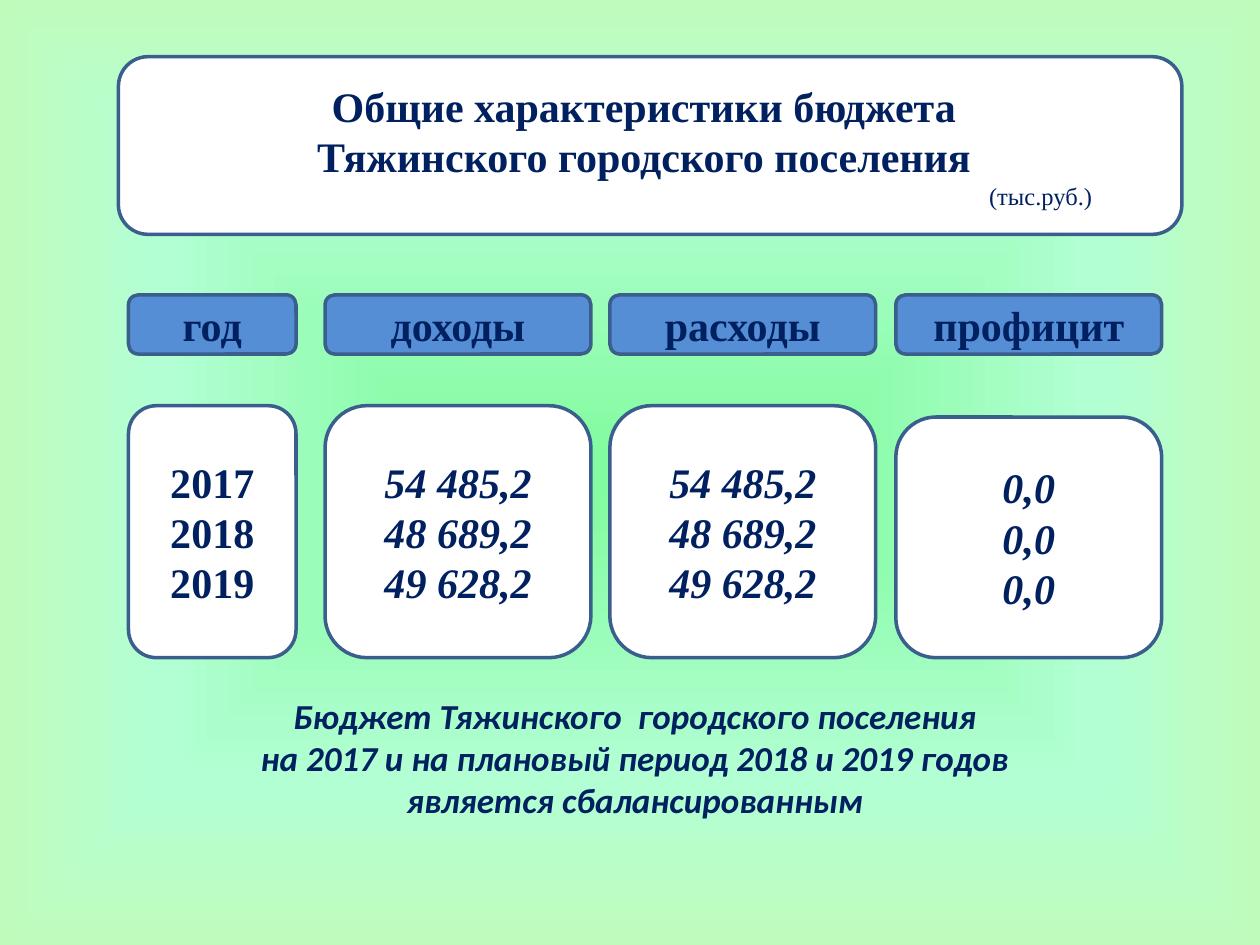
from lxml import etree
from pptx import Presentation
from pptx.dml.color import RGBColor
from pptx.enum.shapes import MSO_SHAPE
from pptx.enum.text import MSO_ANCHOR, MSO_AUTO_SIZE, PP_ALIGN
from pptx.oxml import parse_xml
from pptx.oxml.ns import nsdecls, qn
from pptx.util import Inches, Pt

NAVY, EDGE, BLUE, WHITE = "002060", "3A5F8C", "558ED5", "FFFFFF"
HEAD = dict(name="Times New Roman", size=Pt(24), bold=True, italic=False)
DATA = dict(HEAD, italic=True)
UNIT = dict(HEAD, size=Pt(14), bold=False)
NOTE = dict(name="Calibri", size=Pt(20), bold=True, italic=True)

# Column left, width, heading, top of the values, values, value format
COLS = [
    (1.02, 1.33, "год", 3.22, ["2017", "2018", "2019"], HEAD),
    (2.58, 2.11, "доходы", 3.22, ["54 485,2", "48 689,2", "49 628,2"], DATA),
    (4.84, 2.11, "расходы", 3.22, ["54 485,2", "48 689,2", "49 628,2"], DATA),
    (7.11, 2.11, "профицит", 3.31, ["0,0", "0,0", "0,0"], DATA),
]


def color(code):
    return RGBColor.from_string(code)


def write(frame, lines, form):
    """Fill a text frame with centred paragraphs and return them."""
    frame.word_wrap = True
    frame.vertical_anchor = MSO_ANCHOR.MIDDLE
    frame.text = "\n".join(lines)
    for para in frame.paragraphs:
        para.alignment = PP_ALIGN.CENTER
        style(para, form)
    return frame.paragraphs


def style(para, form):
    for run in para.runs:
        for key, value in form.items():
            setattr(run.font, key, value)
        run.font.color.rgb = color(NAVY)


def panel(slide, box, fill):
    """Rounded box with a dark blue edge."""
    shape = slide.shapes.add_shape(
        MSO_SHAPE.ROUNDED_RECTANGLE, *map(Inches, box))
    shape.shadow.inherit = False
    shape.fill.solid()
    shape.fill.fore_color.rgb = color(fill)
    shape.line.color.rgb = color(EDGE)
    shape.line.width = Pt(2)
    return shape


def backdrop(slide):
    """Gradient that spreads from the centre of the slide."""
    slide.background.fill.solid()
    props = slide.background.fill._xPr
    props.remove(props.find(qn("a:solidFill")))
    grad = parse_xml(
        f'<a:gradFill {nsdecls("a")} rotWithShape="1"><a:gsLst/>'
        '<a:path path="rect"><a:fillToRect l="50000" t="50000" '
        'r="50000" b="50000"/></a:path></a:gradFill>')
    for pos, code, alpha in [(3, "83FBA0", 100), (66, "B3FFD4", 52),
                             (100, "BFFCBC", 100)]:
        stop = etree.SubElement(grad[0], qn("a:gs"), pos=str(pos * 1000))
        tint = etree.SubElement(stop, qn("a:srgbClr"), val=code)
        if alpha < 100:
            etree.SubElement(tint, qn("a:alpha"), val=str(alpha * 1000))
    props.insert(0, grad)


def header(slide, box):
    """Title on a white panel, with the unit at lower right."""
    title = slide.shapes.title
    title._element.addprevious(panel(slide, box, WHITE)._element)
    title.left, title.top, title.width, title.height = map(Inches, box)
    frame = title.text_frame
    frame.auto_size = MSO_AUTO_SIZE.NONE
    frame.margin_right = Inches(0.2)
    unit = write(frame, ["Общие характеристики бюджета",
                         "Тяжинского городского поселения",
                         "(тыс.руб.)"], HEAD)[-1]
    style(unit, UNIT)
    unit.alignment = PP_ALIGN.LEFT
    props = unit._p.get_or_add_pPr()
    props.set("marL", str(Inches(box[2] - 1.63)))
    props.set("indent", "0")


def column(slide, left, width, name, top, values, form):
    """Blue heading above a white box of values, all ending at one level."""
    cap = panel(slide, (left, 2.34, width, 0.47), BLUE)
    write(cap.text_frame, [name], HEAD)
    body = panel(slide, (left, top, width, 5.22 - top), WHITE)
    write(body.text_frame, values, form)


def footer(slide, box):
    """Closing statement."""
    text = slide.shapes.add_textbox(*map(Inches, box))
    write(text.text_frame, [
        "Бюджет Тяжинского  городского поселения",
        "на 2017 и на плановый период 2018 и 2019 годов является "
        "сбалансированным"], NOTE)


def main():
    deck = Presentation()
    deck.slide_width, deck.slide_height = Inches(10), Inches(7.5)
    slide = deck.slides.add_slide(deck.slide_layouts[5])
    backdrop(slide)
    header(slide, (0.94, 0.45, 8.44, 1.41))
    for col in COLS:
        column(slide, *col)
    footer(slide, (1.68, 5.46, 6.72, 1.11))
    deck.save("out.pptx")


if __name__ == "__main__":
    main()
